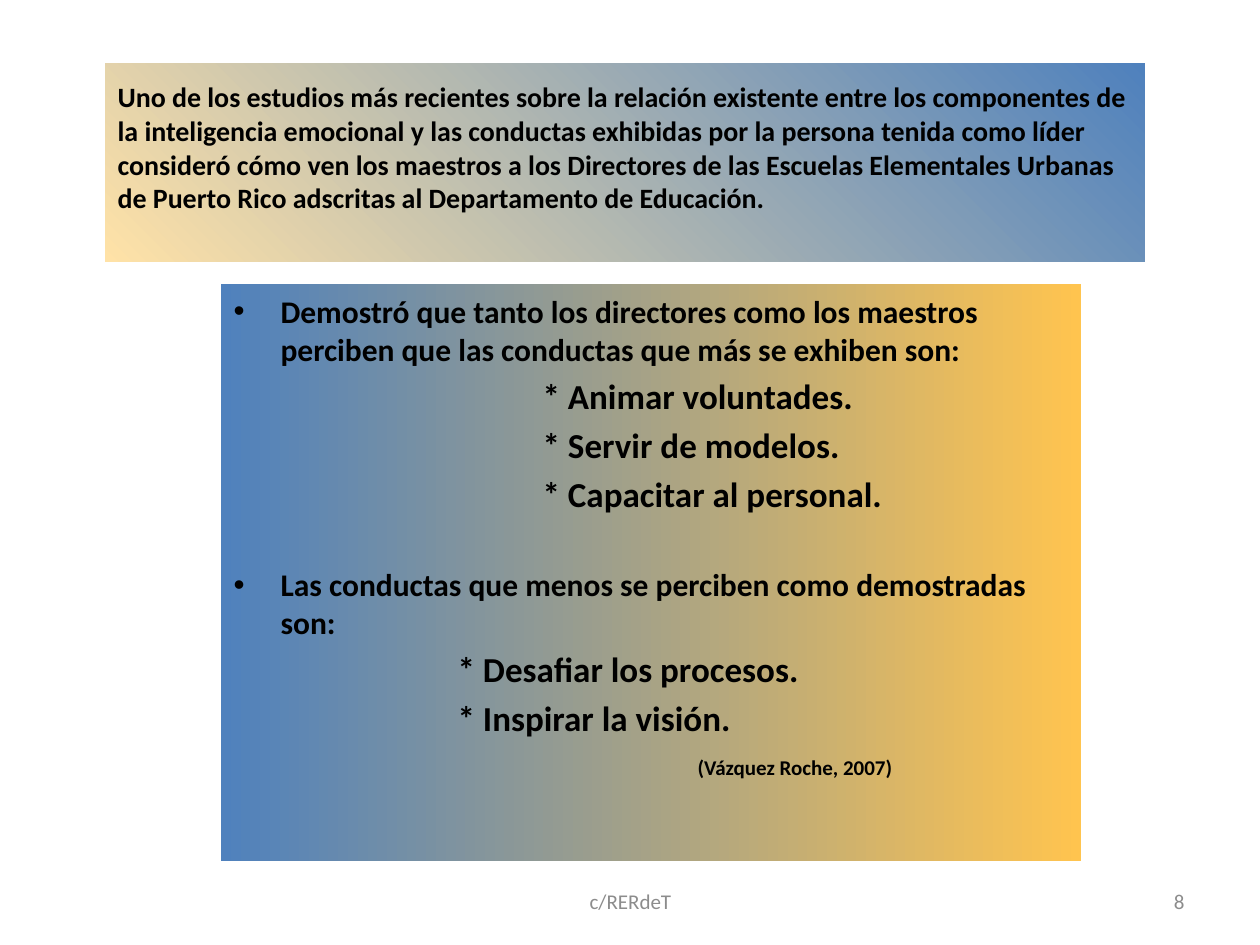
"""Build the slide on emotional intelligence and leadership conduct."""
import pptx
import pptx.util
import pptx.dml.color
import pptx.enum.text
import pptx.oxml.xmlchemy

EMU_PER_PX = 914400 / 126
FONT = "Calibri"
BLACK = pptx.dml.color.RGBColor(0, 0, 0)
GRAY = pptx.dml.color.RGBColor(0x8C, 0x8C, 0x8C)
BLUE = pptx.dml.color.RGBColor(0x4F, 0x81, 0xBD)
CREAM = pptx.dml.color.RGBColor(0xFF, 0xE2, 0xA7)
AMBER = pptx.dml.color.RGBColor(0xFF, 0xC4, 0x4F)
ALIGN = pptx.enum.text.PP_ALIGN
ANCHOR = pptx.enum.text.MSO_ANCHOR

TITLE = (
    "Uno de los estudios más recientes sobre la relación existente entre los "
    "componentes de la inteligencia emocional y las conductas exhibidas por la "
    "persona tenida como líder consideró cómo ven los maestros a los Directores "
    "de las Escuelas Elementales Urbanas de Puerto Rico adscritas al "
    "Departamento de Educación."
)
TITLE_BOX = (105, 63, 1040, 199)
BODY_BOX = (221, 284, 860, 577)

STYLES = {
    "bullet": {"left": 47, "hang": -47, "size": 18},
    "most": {"left": 309, "hang": 0, "size": 20},
    "least": {"left": 224, "hang": 0, "size": 20},
    "citation": {"left": 464, "hang": 0, "size": 12},
}
FINDINGS = [
    ("bullet", 0, "Demostró que tanto los directores como los maestros perciben "
                  "que las conductas que más se exhiben son:"),
    ("most", 4, "* Animar voluntades."),
    ("most", 4, "* Servir de modelos."),
    ("most", 4, "* Capacitar al personal."),
    ("bullet", 29, "Las conductas que menos se perciben como demostradas son:"),
    ("least", 4, "* Desafiar los procesos."),
    ("least", 4, "* Inspirar la visión."),
    ("citation", 9, "(Vázquez Roche, 2007)"),
]
FOOTERS = [
    ("c/RERdeT", (431, 876, 399, 50), ALIGN.CENTER),
    ("8", (903, 876, 294, 50), ALIGN.RIGHT),
]


def px(length):
    return pptx.util.Emu(round(length * EMU_PER_PX))


def place(shape, box):
    shape.left, shape.top, shape.width, shape.height = map(px, box)


def add_span(para, text, size, color, bold):
    span = para.add_run()
    span.text = text
    span.font.name = FONT
    span.font.size = pptx.util.Pt(size)
    span.font.bold = bold
    span.font.color.rgb = color


def prepare_panel(shape, box, colors, angle, anchor, top_margin):
    place(shape, box)
    shape.fill.gradient()
    shape.fill.gradient_angle = angle
    for stop, color, position in zip(shape.fill.gradient_stops, colors, (0, 1)):
        stop.color.rgb = color
        stop.position = position
    frame = shape.text_frame
    frame.word_wrap = True
    frame.auto_size = pptx.enum.text.MSO_AUTO_SIZE.NONE
    frame.vertical_anchor = anchor
    frame.margin_top = px(top_margin)
    return frame


def add_title(page):
    frame = prepare_panel(page.shapes.title, TITLE_BOX, (CREAM, BLUE), 45, ANCHOR.TOP, 17)
    para = frame.paragraphs[0]
    para.alignment = ALIGN.LEFT
    add_span(para, TITLE, 16, BLACK, True)


def add_findings(page):
    body = page.placeholders[1]
    frame = prepare_panel(body, BODY_BOX, (BLUE, AMBER), 0, ANCHOR.TOP, 8)
    for index, (kind, before, text) in enumerate(FINDINGS):
        para = frame.add_paragraph() if index else frame.paragraphs[0]
        style = STYLES[kind]
        properties = para._p.get_or_add_pPr()
        properties.set("marL", str(px(style["left"])))
        properties.set("indent", str(px(style["hang"])))
        if kind != "bullet":
            properties.append(pptx.oxml.xmlchemy.OxmlElement("a:buNone"))
        para.space_before = pptx.util.Pt(before)
        add_span(para, text, style["size"], BLACK, True)


def add_footers(page):
    for text, box, alignment in FOOTERS:
        frame = page.shapes.add_textbox(*map(px, box)).text_frame
        frame.word_wrap = True
        frame.vertical_anchor = ANCHOR.MIDDLE
        para = frame.paragraphs[0]
        para.alignment = alignment
        add_span(para, text, 12, GRAY, False)


def main():
    deck = pptx.Presentation()
    deck.slide_width, deck.slide_height = px(1260), px(945)
    page = deck.slides.add_slide(deck.slide_layouts[1])
    add_title(page)
    add_findings(page)
    add_footers(page)
    deck.save("out.pptx")


if __name__ == "__main__":
    main()
